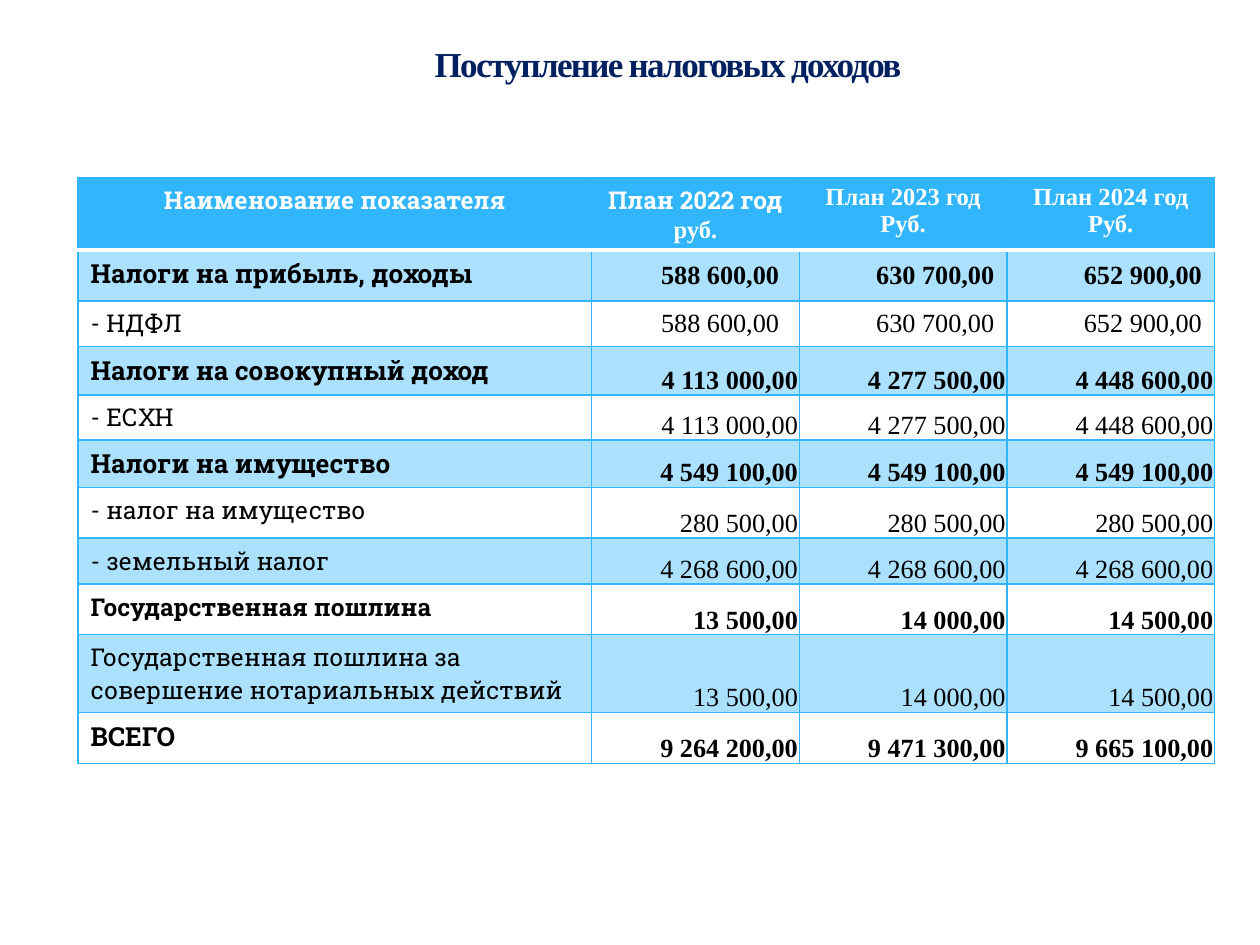
from dataclasses import dataclass

from lxml import etree
from pptx import Presentation
from pptx.dml.color import RGBColor
from pptx.enum.text import MSO_ANCHOR, PP_ALIGN
from pptx.oxml.ns import qn
from pptx.util import Inches, Pt

LEFT, CENTER, RIGHT = PP_ALIGN.LEFT, PP_ALIGN.CENTER, PP_ALIGN.RIGHT
TOP, MIDDLE, BOTTOM = MSO_ANCHOR.TOP, MSO_ANCHOR.MIDDLE, MSO_ANCHOR.BOTTOM
TITLE_ONLY = 5


@dataclass(frozen=True)
class Theme:
    accent: str = "31B6FD"
    title: str = "002060"
    text: str = "000000"
    light: str = "FFFFFF"
    slab: str = "Roboto Slab"
    serif: str = "Times New Roman"
    title_size: int = 20
    large: int = 15
    small: int = 14
    band_opacity: int = 40
    line: int = 1
    header_line: int = 3


THEME = Theme()

# Column widths in inches
COLUMNS = (4.08, 1.65, 1.65, 1.65)
HEADER_HEIGHT = 0.55
# Each header cell: (line, font) pairs
HEADER = (
    (("Наименование показателя", THEME.slab),),
    (("План 2022 год", THEME.slab), ("руб.", THEME.serif)),
    (("План 2023 год", THEME.serif), ("Руб.", THEME.serif)),
    (("План 2024 год", THEME.serif), ("Руб.", THEME.serif)),
)
# Label, label size, bold, row height, values by year
ROWS = (
    ("Налоги на прибыль, доходы", THEME.large, True, 0.40, ("588 600,00", "630 700,00", "652 900,00")),
    ("- НДФЛ", THEME.small, False, 0.36, ("588 600,00", "630 700,00", "652 900,00")),
    ("Налоги на совокупный доход", THEME.large, True, 0.38, ("4 113 000,00", "4 277 500,00", "4 448 600,00")),
    ("- ЕСХН", THEME.small, False, 0.33, ("4 113 000,00", "4 277 500,00", "4 448 600,00")),
    ("Налоги на имущество", THEME.large, True, 0.34, ("4 549 100,00", "4 549 100,00", "4 549 100,00")),
    ("- налог на имущество", THEME.small, False, 0.40, ("280 500,00", "280 500,00", "280 500,00")),
    ("- земельный налог", THEME.small, False, 0.36, ("4 268 600,00", "4 268 600,00", "4 268 600,00")),
    ("Государственная пошлина", THEME.small, True, 0.40, ("13 500,00", "14 000,00", "14 500,00")),
    ("Государственная пошлина за совершение нотариальных действий", THEME.small, False, 0.55,
     ("13 500,00", "14 000,00", "14 500,00")),
    ("ВСЕГО", THEME.large, True, 0.40, ("9 264 200,00", "9 471 300,00", "9 665 100,00")),
)
INCOME_TAX_ROWS = 2


def write(paragraph, text, *, font, size, color, bold=False, align=LEFT):
    paragraph.alignment = align
    run = paragraph.add_run()
    run.text = text
    run.font.name = font
    run.font.size = Pt(size)
    run.font.bold = bold
    run.font.color.rgb = RGBColor.from_string(color)
    return run


def set_borders(cell, **edges):
    """Draw the cell edges L, R, T and B; each override is (colour, points)."""
    properties = cell._tc.get_or_add_tcPr()
    for edge in "LRTB":
        color, width = edges.get(edge, (THEME.accent, THEME.line))
        line = etree.SubElement(properties, qn(f"a:ln{edge}"), w=str(Pt(width)))
        fill = etree.SubElement(line, qn("a:solidFill"))
        etree.SubElement(fill, qn("a:srgbClr"), val=color)


def set_fill(cell, color=None, opacity=100):
    if color is None:
        cell.fill.background()
        return
    cell.fill.solid()
    cell.fill.fore_color.rgb = RGBColor.from_string(color)
    if opacity < 100:
        color_element = cell._tc.tcPr.find(f"{qn('a:solidFill')}/{qn('a:srgbClr')}")
        etree.SubElement(color_element, qn("a:alpha"), val=str(opacity * 1000))


def set_margins(cell, left, right, top, bottom):
    cell.margin_left, cell.margin_right = Inches(left), Inches(right)
    cell.margin_top, cell.margin_bottom = Inches(top), Inches(bottom)


def fill_header(table):
    for column, lines in enumerate(HEADER):
        cell = table.cell(0, column)
        set_borders(cell, B=(THEME.light, THEME.header_line))
        set_fill(cell, THEME.accent)
        for index, (text, font) in enumerate(lines):
            frame = cell.text_frame
            paragraph = frame.add_paragraph() if index else frame.paragraphs[0]
            write(paragraph, text, font=font, size=THEME.small,
                  color=THEME.light, bold=True, align=CENTER)


def fill_row(table, row, label, label_size, bold, values):
    edges = {"T": (THEME.light, THEME.header_line)} if row == 1 else {}
    for column, text in enumerate((label, *values)):
        cell = table.cell(row, column)
        set_borders(cell, **edges)
        set_fill(cell, THEME.accent if row % 2 else None, THEME.band_opacity)
        paragraph = cell.text_frame.paragraphs[0]
        if column == 0:
            cell.vertical_anchor = TOP
            write(paragraph, text, font=THEME.slab, size=label_size,
                  color=THEME.text, bold=bold)
            continue
        write(paragraph, text, font=THEME.serif, size=THEME.large,
              color=THEME.text, bold=bold, align=RIGHT)
        if row <= INCOME_TAX_ROWS:
            cell.vertical_anchor = MIDDLE
            set_margins(cell, 0.1, 0.16 if column == 1 else 0.1, 0.05, 0.05)
        else:
            cell.vertical_anchor = BOTTOM
            set_margins(cell, 0.01, 0.01, 0.01, 0)


def add_title(slide, text, left, top, width, height):
    title = slide.shapes.title
    title.left, title.top, title.width, title.height = left, top, width, height
    frame = title.text_frame
    frame.word_wrap = True
    frame.vertical_anchor = MIDDLE
    run = write(frame.paragraphs[0], text, font=THEME.serif, size=THEME.title_size,
                color=THEME.title, bold=True, align=CENTER)
    run.font._element.set("spc", "-100")


def add_revenue_table(slide, left, top, width, height):
    table = slide.shapes.add_table(len(ROWS) + 1, len(COLUMNS), left, top, width, height).table
    table.first_row = table.horz_banding = False
    for column, share in zip(table.columns, COLUMNS):
        column.width = int(width * share / sum(COLUMNS))
    heights = (HEADER_HEIGHT, *(row[3] for row in ROWS))
    for row, share in zip(table.rows, heights):
        row.height = int(height * share / sum(heights))
    fill_header(table)
    for index, (label, size, bold, _, values) in enumerate(ROWS, start=1):
        fill_row(table, index, label, size, bold, values)


def main():
    presentation = Presentation()
    presentation.slide_width, presentation.slide_height = Inches(10), Inches(7.5)
    slide = presentation.slides.add_slide(presentation.slide_layouts[TITLE_ONLY])
    add_revenue_table(slide, Inches(0.62), Inches(1.41), Inches(9.02), Inches(4.51))
    add_title(slide, "Поступление налоговых доходов",
              Inches(1.64), Inches(0.23), Inches(7.32), Inches(0.55))
    presentation.save("out.pptx")


if __name__ == "__main__":
    main()
